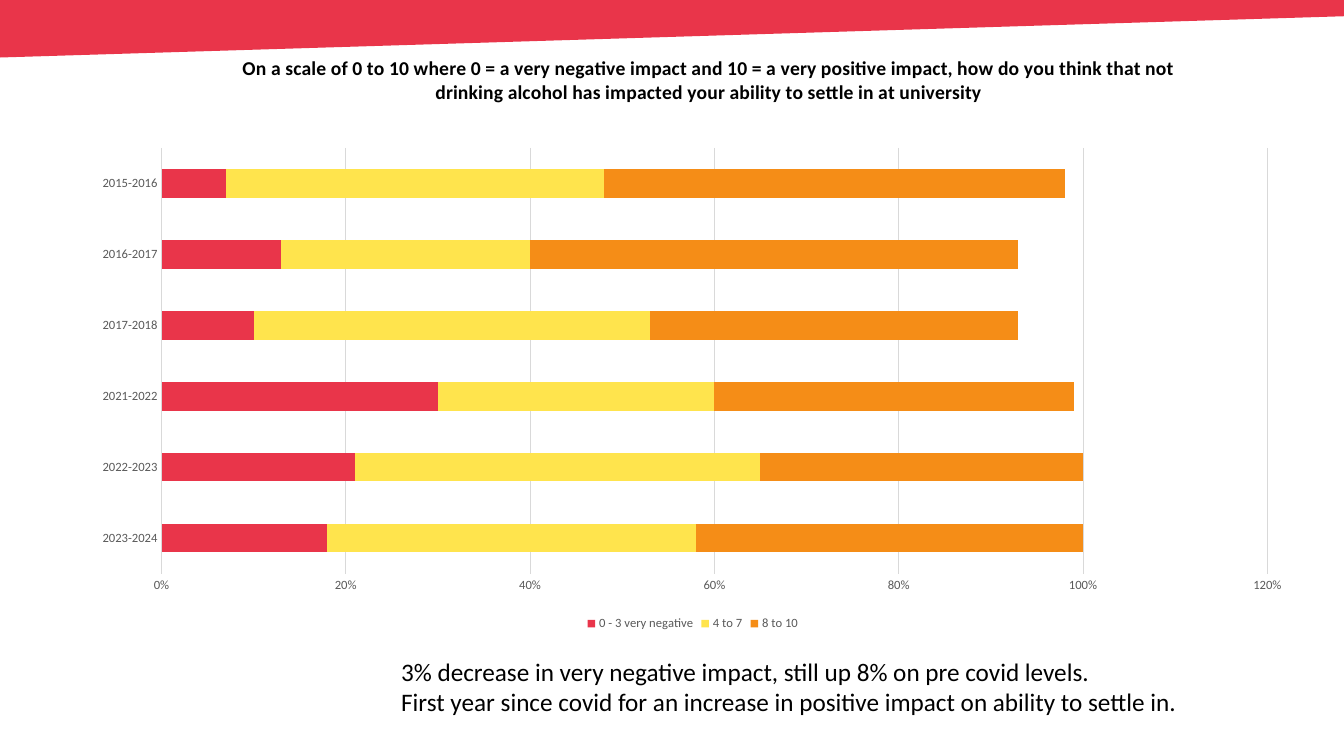
from lxml import etree
from pptx import Presentation
from pptx.chart.data import CategoryChartData
from pptx.dml.color import RGBColor
from pptx.enum.chart import XL_CHART_TYPE, XL_LEGEND_POSITION, XL_TICK_MARK
from pptx.oxml.ns import qn
from pptx.util import Cm, Pt

STACKED_BARS = XL_CHART_TYPE.BAR_STACKED
LEGEND_BOTTOM = XL_LEGEND_POSITION.BOTTOM
NO_TICK = XL_TICK_MARK.NONE

RED = RGBColor(0xE9, 0x35, 0x4A)
YELLOW = RGBColor(0xFF, 0xE4, 0x4D)
ORANGE = RGBColor(0xF5, 0x8D, 0x17)
BLACK = RGBColor(0, 0, 0)
GREY = RGBColor(0x59, 0x59, 0x59)
PALE_GREY = RGBColor(0xD9, 0xD9, 0xD9)
FONT = "Calibri"

TITLE = ("On a scale of 0 to 10 where 0 = a very negative impact and 10 = a very positive impact, "
         "how do you think that not drinking alcohol has impacted your ability to settle in at university")
YEARS = ["2023-2024", "2022-2023", "2021-2022", "2017-2018", "2016-2017", "2015-2016"]
SERIES = [
    ("0 - 3 very negative", RED, [0.18, 0.21, 0.3, 0.1, 0.13, 0.07]),
    ("4 to 7", YELLOW, [0.4, 0.44, 0.3, 0.43, 0.27, 0.41]),
    ("8 to 10", ORANGE, [0.42, 0.35, 0.39, 0.4, 0.53, 0.5]),
]
FINDINGS = [
    "3% decrease in very negative impact, still up 8% on pre covid levels.",
    "First year since covid for an increase in positive impact on ability to settle in.",
]

SLIDE_WIDTH, SLIDE_HEIGHT = Cm(33.87), Cm(19.05)
BANNER = [(0, 0), (0, Cm(1.45)), (SLIDE_WIDTH, Cm(0.41)), (SLIDE_WIDTH, 0)]
CHART_BOX = (Cm(1.98), Cm(0.86), Cm(30.96), Cm(15.14))
PLOT_BOX = (Cm(4.07), Cm(3.73), Cm(27.87), Cm(10.73))
TITLE_CORNER = (Cm(6.02), Cm(1.27))
FINDINGS_BOX = (Cm(9.86), Cm(16.41), Cm(23.52), Cm(1.8))


def style_font(font, size, color, bold=False):
    font.name = FONT
    font.size = Pt(size)
    font.bold = bold
    font.color.rgb = color


def place(parent, index, settings):
    for old in parent.findall(qn("c:layout")):
        parent.remove(old)
    layout = etree.Element(qn("c:layout"))
    manual = etree.SubElement(layout, qn("c:manualLayout"))
    for tag, value in settings:
        etree.SubElement(manual, qn("c:" + tag)).set("val", str(value))
    parent.insert(index, layout)


def add_banner(page):
    builder = page.shapes.build_freeform(*BANNER[0])
    builder.add_line_segments(BANNER[1:], close=True)
    banner = builder.convert_to_shape()
    banner.shadow.inherit = False
    banner.fill.solid()
    banner.fill.fore_color.rgb = RED
    banner.line.fill.background()


def add_findings(page):
    box = page.shapes.add_textbox(*FINDINGS_BOX)
    frame = box.text_frame
    frame.word_wrap = True
    for number, finding in enumerate(FINDINGS):
        para = frame.add_paragraph() if number else frame.paragraphs[0]
        span = para.add_run()
        span.text = finding
        style_font(span.font, 18, BLACK)


def style_axes(chart):
    years, shares = chart.category_axis, chart.value_axis
    for axis in (years, shares):
        axis.major_tick_mark = NO_TICK
        axis.minor_tick_mark = NO_TICK
        style_font(axis.tick_labels.font, 9, GREY)
    years.has_major_gridlines = False
    shares.has_major_gridlines = True
    for line in (years.format.line, shares.major_gridlines.format.line):
        line.color.rgb = PALE_GREY
        line.width = Pt(0.75)
    shares.format.line.fill.background()
    shares.minimum_scale = 0
    shares.maximum_scale = 1.2
    shares.major_unit = 0.2
    shares.tick_labels.number_format = "0%"
    shares.tick_labels.number_format_is_linked = False


def add_impact_chart(page):
    data = CategoryChartData(number_format="0%")
    data.categories = YEARS
    for name, color, values in SERIES:
        data.add_series(name, values)
    chart = page.shapes.add_chart(STACKED_BARS, *CHART_BOX, data).chart
    style_font(chart.font, 10, BLACK)

    plot = chart.plots[0]
    plot.gap_width = 150
    plot.overlap = 100
    plot.vary_by_categories = False
    for series, (name, color, values) in zip(plot.series, SERIES):
        series.format.fill.solid()
        series.format.fill.fore_color.rgb = color
    style_axes(chart)

    chart.has_legend = True
    chart.legend.position = LEGEND_BOTTOM
    chart.legend.include_in_layout = False
    style_font(chart.legend.font, 9, GREY)

    chart.has_title = True
    span = chart.chart_title.text_frame.paragraphs[0].add_run()
    span.text = TITLE
    style_font(span.font, 14, BLACK, True)

    left, top, width, height = CHART_BOX
    title_left, title_top = TITLE_CORNER
    place(chart.chart_title._element, 1, [
        ("xMode", "edge"), ("yMode", "edge"),
        ("x", (title_left - left) / width), ("y", (title_top - top) / height),
    ])
    plot_left, plot_top, plot_width, plot_height = PLOT_BOX
    place(chart._chartSpace.find(".//" + qn("c:plotArea")), 0, [
        ("layoutTarget", "inner"), ("xMode", "edge"), ("yMode", "edge"),
        ("x", (plot_left - left) / width), ("y", (plot_top - top) / height),
        ("w", plot_width / width), ("h", plot_height / height),
    ])


def main():
    deck = Presentation()
    deck.slide_width, deck.slide_height = SLIDE_WIDTH, SLIDE_HEIGHT
    page = deck.slides.add_slide(deck.slide_layouts[6])
    add_banner(page)
    add_findings(page)
    add_impact_chart(page)
    deck.save("out.pptx")


if __name__ == "__main__":
    main()
